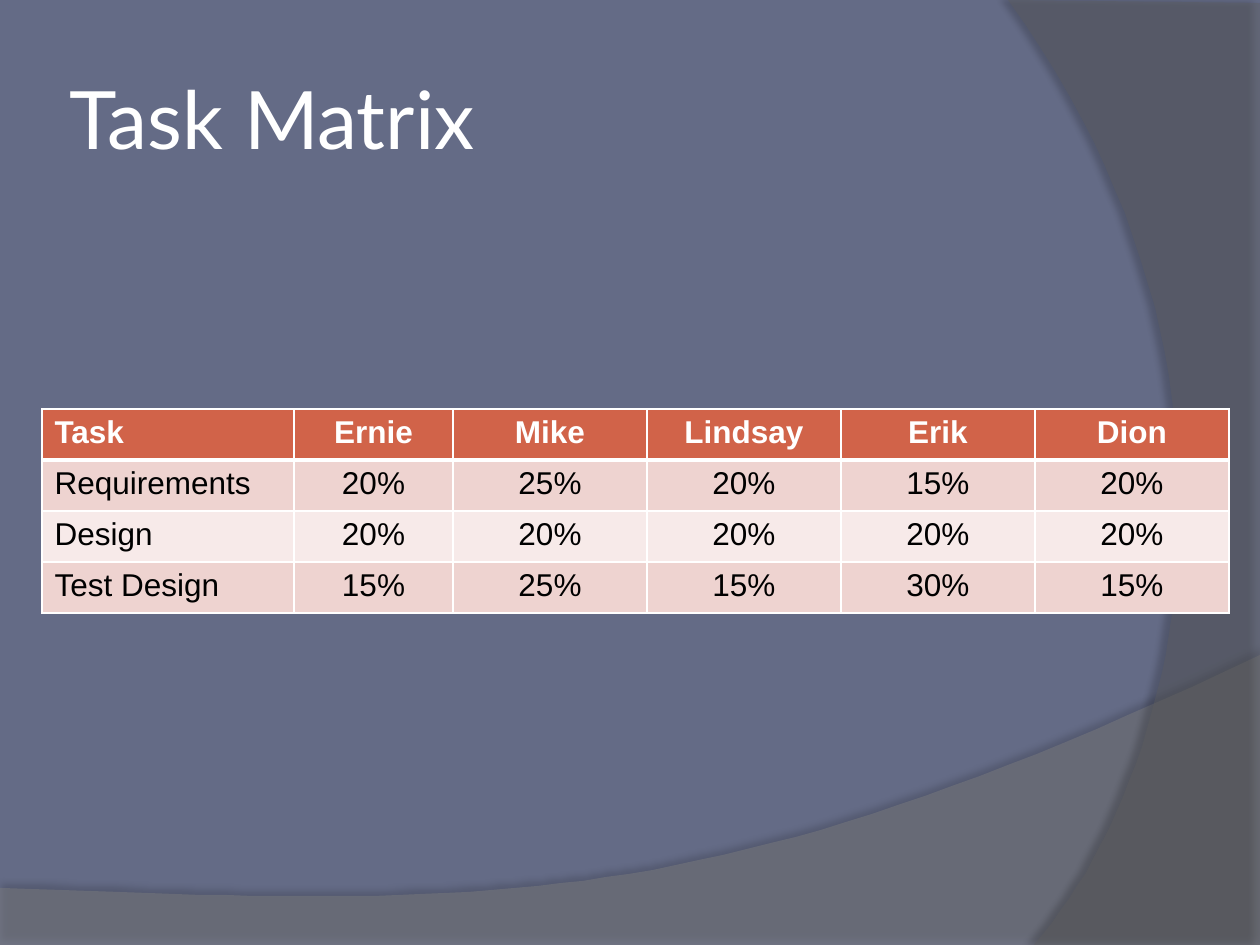
from lxml import etree
from pptx import Presentation
from pptx import util as u
from pptx.dml.color import RGBColor
from pptx.enum import text
from pptx.oxml import ns

PX = u.Inches(1) / 126
BACKGROUND = RGBColor(0x64, 0x6B, 0x86)
LIGHT_WAVE = RGBColor(0x7F, 0x7F, 0x7F)
DARK_WAVE = RGBColor(0x5E, 0x5E, 0x5E)
WHITE = RGBColor(0xFF, 0xFF, 0xFF)
BLACK = RGBColor(0, 0, 0)
HEADER = RGBColor(0xD1, 0x63, 0x49)
BANDS = [RGBColor(0xEE, 0xD3, 0xD0), RGBColor(0xF7, 0xEA, 0xE9)]

COLUMNS = [252, 159, 194, 194, 194, 194]
ROW_HEIGHT = 51
TASKS = [
    ["Task", "Ernie", "Mike", "Lindsay", "Erik", "Dion"],
    ["Requirements", "20%", "25%", "20%", "15%", "20%"],
    ["Design", "20%", "20%", "20%", "20%", "20%"],
    ["Test Design", "15%", "25%", "15%", "30%", "15%"],
]


def px(length):
    return u.Emu(round(length * PX))


def add_node(parent, tag, **attributes):
    values = {name: str(value) for name, value in attributes.items()}
    return etree.SubElement(parent, ns.qn(tag), values)


def write(frame, words, size, font, color, bold=False, align=text.PP_ALIGN.LEFT):
    para = frame.paragraphs[0]
    para.alignment = align
    span = para.add_run()
    span.text = words
    span.font.size = u.Pt(size)
    span.font.name = font
    span.font.bold = bold
    span.font.color.rgb = color


def bezier(start, first, second, end, steps=48):
    """Points along a cubic curve, without its start."""
    points = []
    for step in range(1, steps + 1):
        t = step / steps
        weights = ((1 - t) ** 3, 3 * t * (1 - t) ** 2, 3 * t * t * (1 - t), t ** 3)
        corners = list(zip(weights, (start, first, second, end)))
        points.append(tuple(sum(w * point[axis] for w, point in corners) for axis in (0, 1)))
    return points


def add_wave(page, left, top, corners, curve, color, opacity, shadow):
    """A translucent outline: straight corners, then one curve from the last."""
    outline = corners + bezier(corners[-1], *curve)
    builder = page.shapes.build_freeform(*outline[0], scale=PX)
    builder.add_line_segments(outline[1:], close=True)
    wave = builder.convert_to_shape(px(left), px(top))
    wave.fill.solid()
    wave.fill.fore_color.rgb = color
    wave.line.fill.background()
    wave.shadow.inherit = False
    properties = wave._element.spPr
    fill_color = properties.find(ns.qn("a:solidFill"))[0]
    add_node(fill_color, "a:alpha", val=opacity * 1000)

    # Soft edge shadow
    strength, distance, angle = shadow
    cast = add_node(properties.find(ns.qn("a:effectLst")), "a:outerShdw",
                    blurRad=u.Pt(4), dist=u.Pt(distance), dir=angle * 60000,
                    algn="ctr", rotWithShape=0)
    shade = add_node(cast, "a:srgbClr", val=str(BLACK))
    add_node(shade, "a:alpha", val=strength * 1000)


def add_backdrop(page):
    page.background.fill.solid()
    page.background.fill.fore_color.rgb = BACKGROUND
    add_wave(page, 0, 655, [(0, 233), (0, 290), (1260, 290), (1260, 0)],
             [(704, 264), (493, 251), (0, 233)], LIGHT_WAVE, 45, (35, 3.5, 270))
    add_wave(page, 1008, 0, [(252, 3), (252, 945), (26, 945)],
             [(170, 780), (275, 378), (0, 0)], DARK_WAVE, 40, (45, 4, 180))


def add_title(page, left, top, width, height):
    box = page.shapes.add_textbox(px(left), px(top), px(width), px(height))
    frame = box.text_frame
    frame.word_wrap = True
    frame.vertical_anchor = text.MSO_ANCHOR.MIDDLE
    frame.margin_left = frame.margin_right = u.Inches(0.05)
    frame.margin_top = frame.margin_bottom = u.Inches(0.05)
    write(frame, "Task Matrix", 46, "Lato", WHITE)


def set_borders(cell, top, bottom):
    properties = cell._tc.get_or_add_tcPr()
    widths = {"a:lnL": 1, "a:lnR": 1, "a:lnT": top, "a:lnB": bottom}
    for position, (side, width) in enumerate(widths.items()):
        line = add_node(properties, side, w=u.Pt(width))
        add_node(add_node(line, "a:solidFill"), "a:srgbClr", val=str(WHITE))
        properties.insert(position, line)


def add_matrix(page, left, top):
    height = ROW_HEIGHT * len(TASKS)
    holder = page.shapes.add_table(len(TASKS), len(COLUMNS), px(left), px(top),
                                   px(sum(COLUMNS)), px(height))
    table = holder.table
    for column, width in zip(table.columns, COLUMNS):
        column.width = px(width)
    for r, values in enumerate(TASKS):
        table.rows[r].height = px(ROW_HEIGHT)
        header = r == 0
        for c, value in enumerate(values):
            cell = table.cell(r, c)
            cell.fill.solid()
            cell.fill.fore_color.rgb = HEADER if header else BANDS[(r - 1) % 2]
            set_borders(cell, top=3 if r == 1 else 1, bottom=3 if header else 1)
            write(cell.text_frame, value, 18, "Arial", WHITE if header else BLACK, bold=header,
                  align=text.PP_ALIGN.CENTER if c else text.PP_ALIGN.LEFT)


def main():
    deck = Presentation()
    deck.slide_width, deck.slide_height = px(1260), px(945)
    page = deck.slides.add_slide(deck.slide_layouts[6])
    add_backdrop(page)
    add_title(page, 63, 38, 1029, 158)
    add_matrix(page, 42, 409)
    deck.save("out.pptx")


if __name__ == "__main__":
    main()
